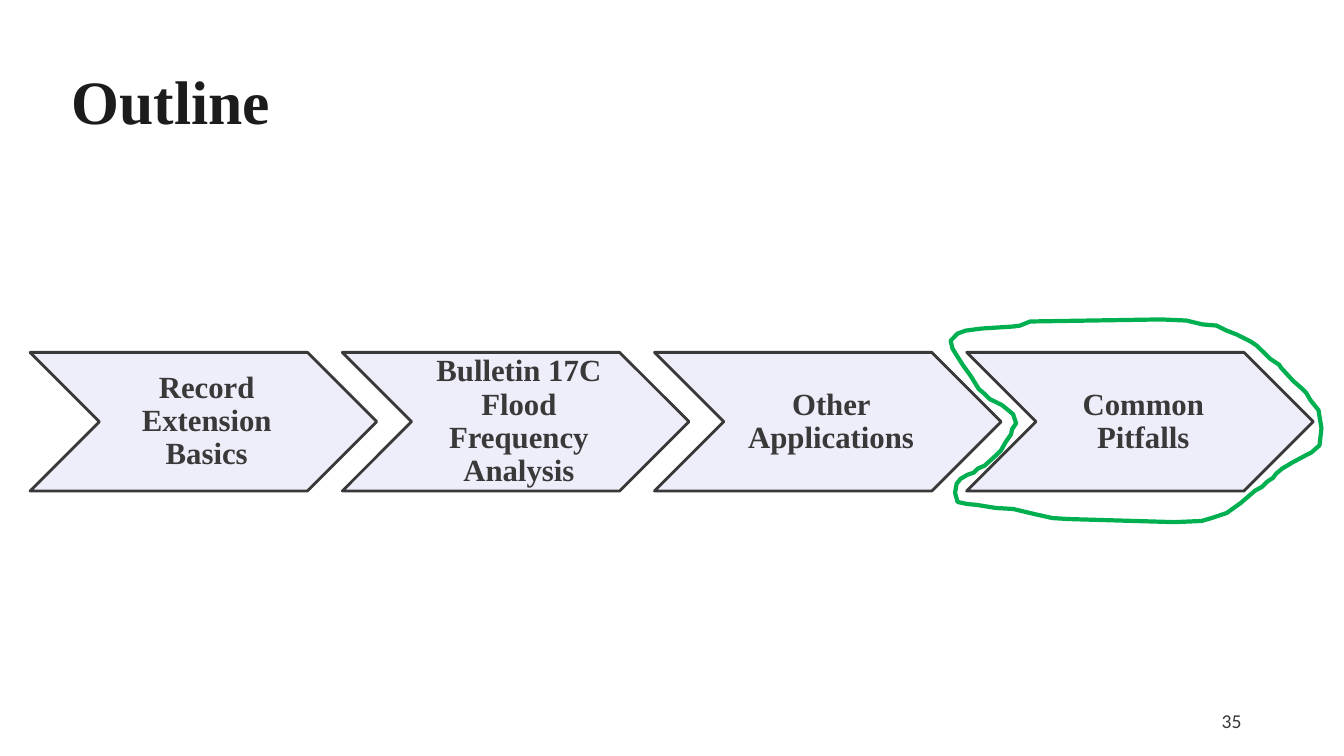
"""Build the outline slide with four chevron steps, the last one circled by hand."""
from dataclasses import dataclass

from pptx import Presentation
from pptx import util as u
from pptx.dml.color import RGBColor
from pptx.enum import shapes, text
from pptx.slide import Slide
from pptx.text.text import TextFrame

COLOURS = {
    "title": "1C1C1C",
    "ink": "393939",
    "chevron": "EEEEFA",
    "marker": "00B050",
}
SERIF = "Times New Roman"
STEP_LABELS = (
    "Record Extension Basics",
    "Bulletin 17C Flood Frequency Analysis",
    "Other Applications",
    "Common Pitfalls",
)
STEP_LEFT, STEP_TOP, STEP_PITCH = 21.5, 251.7, 223
STEP_WIDTH, STEP_HEIGHT = 247.6, 99
MARKER_OUTLINE = (
    (735.8, 229.7), (829.4, 228.2), (847.4, 229), (859, 231.8), (869, 232.6),
    (876.2, 236.2), (883.4, 239), (893.5, 244.1), (897.8, 247), (903.6, 252.7),
    (907.2, 256.3), (913.7, 260.6), (915.1, 262.8), (923.8, 272.2), (929.5, 277.2),
    (933.1, 280.8), (936, 285.8), (941.8, 293), (943.9, 306), (942.5, 318.2),
    (936.7, 323.3), (933.8, 324.7), (923, 330.5), (915.8, 334.8), (911.5, 338.4),
    (909.4, 341.3), (905, 344.2), (901.4, 347.8), (896.4, 350.6), (886.3, 359.3),
    (876.2, 366.5), (865.4, 370.1), (858.2, 372.2), (838.8, 373), (763.2, 370.8),
    (751.7, 370.1), (738.7, 367.2), (723.6, 363.6), (711.4, 362.9), (697.7, 360.7),
    (690.5, 360), (684, 358.6), (682.2, 352.1), (683.3, 345.6), (686.2, 342),
    (691.2, 339.1), (695.5, 337.7), (698.4, 334.8), (703.4, 332.6), (712.1, 324.7),
    (715, 321.8), (718.6, 315.4), (722.2, 310.3), (722.9, 306.7), (725.8, 302.4),
    (723.6, 295.9), (719.3, 292.3), (715.7, 289.4), (707, 285.1), (703.4, 281.5),
    (699.1, 277.9), (693.4, 268.6), (687.6, 260.6), (684, 254.9), (680.4, 249.1),
    (679, 243.4), (684, 238.3), (689.8, 236.2), (701.3, 234.7), (723.6, 233.3),
    (728.6, 232.6),
)


@dataclass(frozen=True)
class Step:
    label: str
    left: float


@dataclass(frozen=True)
class TextStyle:
    font: str
    size: float
    colour: str
    bold: bool
    alignment: text.PP_ALIGN
    line_spacing: float = 1.0


TITLE_STYLE = TextStyle(SERIF, 44, "title", True, text.PP_ALIGN.LEFT)
STEP_STYLE = TextStyle(SERIF, 22, "ink", True, text.PP_ALIGN.CENTER, 0.9)
NUMBER_STYLE = TextStyle("Calibri", 14, "ink", False, text.PP_ALIGN.RIGHT)


def colour(name: str) -> RGBColor:
    return RGBColor.from_string(COLOURS[name])


def write(frame: TextFrame, words: str, style: TextStyle) -> None:
    frame.word_wrap = True
    frame.auto_size = text.MSO_AUTO_SIZE.NONE
    frame.vertical_anchor = text.MSO_ANCHOR.MIDDLE
    paragraph = frame.paragraphs[0]
    paragraph.alignment = style.alignment
    paragraph.line_spacing = style.line_spacing
    run = paragraph.add_run()
    run.text = words
    run.font.name = style.font
    run.font.size = u.Pt(style.size)
    run.font.bold = style.bold
    run.font.color.rgb = colour(style.colour)


def add_title(slide: Slide, words: str) -> None:
    title = slide.shapes.title
    title.left, title.top = u.Pt(44), u.Pt(26.6)
    title.width, title.height = u.Pt(816), u.Pt(90)
    write(title.text_frame, words, TITLE_STYLE)


def add_step(slide: Slide, step: Step) -> None:
    shape = slide.shapes.add_shape(
        shapes.MSO_SHAPE.CHEVRON, u.Pt(step.left), u.Pt(STEP_TOP),
        u.Pt(STEP_WIDTH), u.Pt(STEP_HEIGHT),
    )
    shape.shadow.inherit = False
    shape.fill.solid()
    shape.fill.fore_color.rgb = colour("chevron")
    shape.line.color.rgb = colour("ink")
    shape.line.width = u.Pt(2)
    frame = shape.text_frame
    frame.margin_left = u.Pt(7)
    frame.margin_top = frame.margin_right = frame.margin_bottom = u.Pt(2.3)
    write(frame, step.label, STEP_STYLE)


def add_slide_number(slide: Slide, number: str) -> None:
    box = slide.shapes.add_textbox(u.Pt(678), u.Pt(500.5), u.Pt(216), u.Pt(28.8))
    write(box.text_frame, number, NUMBER_STYLE)


def add_marker(slide: Slide) -> None:
    start, *rest = [(u.Pt(x), u.Pt(y)) for x, y in MARKER_OUTLINE]
    builder = slide.shapes.build_freeform(*start)
    builder.add_line_segments(rest, close=True)
    marker = builder.convert_to_shape()
    marker.shadow.inherit = False
    marker.fill.background()
    marker.line.color.rgb = colour("marker")
    marker.line.width = u.Pt(3)


def main() -> None:
    presentation = Presentation()
    presentation.slide_width, presentation.slide_height = u.Pt(960), u.Pt(540)
    slide = presentation.slides.add_slide(presentation.slide_layouts[5])
    add_title(slide, "Outline")
    for index, label in enumerate(STEP_LABELS):
        add_step(slide, Step(label, STEP_LEFT + index * STEP_PITCH))
    add_slide_number(slide, "35")
    add_marker(slide)
    presentation.save("out.pptx")


if __name__ == "__main__":
    main()
